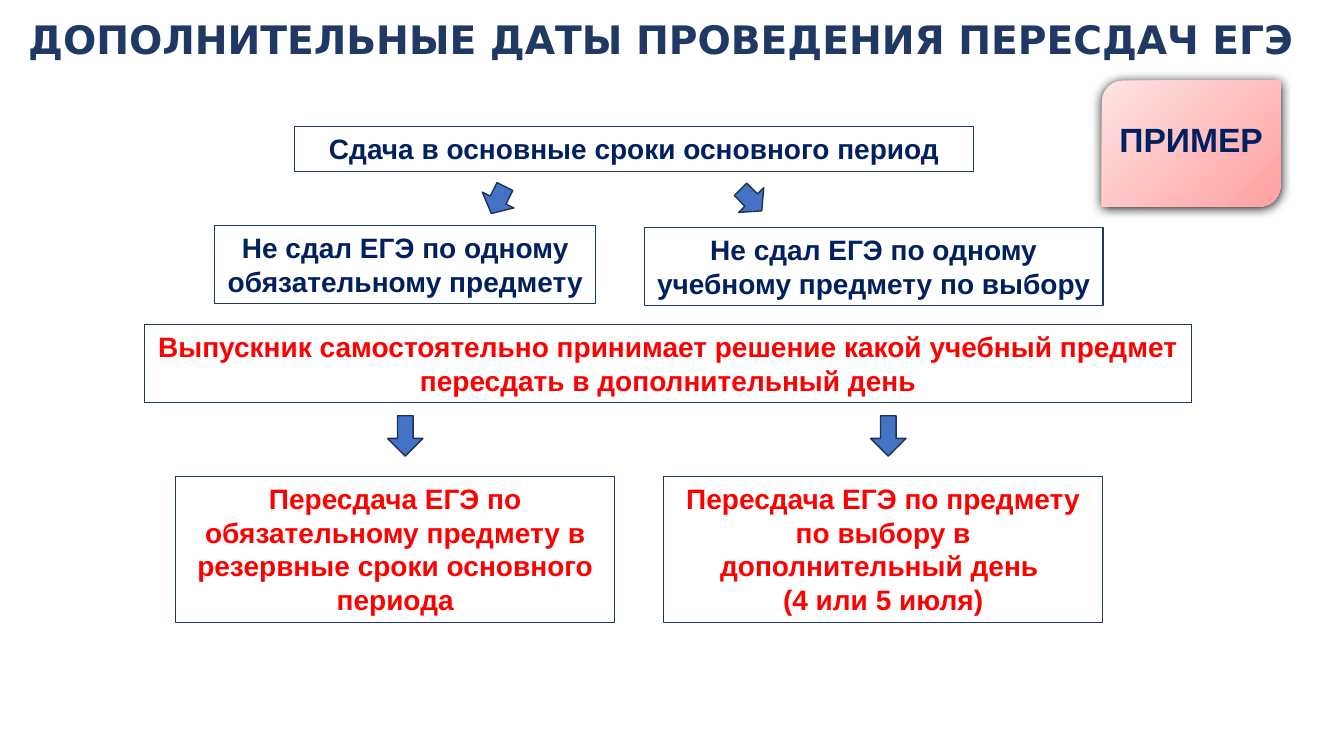
from lxml.etree import SubElement
from pptx import Presentation
from pptx.dml.color import RGBColor
from pptx.enum.shapes import MSO_SHAPE
from pptx.enum.text import MSO_ANCHOR, MSO_AUTO_SIZE, PP_ALIGN
from pptx.oxml.ns import qn
from pptx.util import Inches, Pt

NAVY, DARK_BLUE, RED = "203864", "002060", "FF0000"
ARROW_FILL, ARROW_LINE = "4472C4", "1E3256"


def rgb(value):
    """Turn a hex string into a colour."""
    return RGBColor.from_string(value)


def write(shape, text, size=20, color=DARK_BLUE, font="Arial", align=PP_ALIGN.CENTER,
          anchor=MSO_ANCHOR.TOP, fit=MSO_AUTO_SIZE.NONE, spacing=None, bottom=0.05):
    """Put bold formatted text into a shape, one paragraph per line."""
    frame = shape.text_frame
    frame.text = text
    frame.word_wrap = True
    frame.auto_size = fit
    frame.vertical_anchor = anchor
    frame.margin_bottom = Inches(bottom)
    for paragraph in frame.paragraphs:
        paragraph.alignment = align
        paragraph.line_spacing = spacing
        for run in paragraph.runs:
            run.font.name = font
            run.font.size = Pt(size)
            run.font.bold = True
            run.font.color.rgb = rgb(color)


def add_preset(slide, preset, left, top, width, height):
    """Add a preset shape without a shadow."""
    shape = slide.shapes.add_shape(
        preset, Inches(left), Inches(top), Inches(width), Inches(height))
    shape.shadow.inherit = False
    return shape


def add_step(slide, text, left, top, width, height, color=DARK_BLUE):
    """Add an outlined box with one step of the scheme."""
    step = add_preset(slide, MSO_SHAPE.RECTANGLE, left, top, width, height)
    step.fill.background()
    step.line.color.rgb = rgb(NAVY)
    step.line.width = Pt(0.75)
    write(step, text, color=color, fit=MSO_AUTO_SIZE.SHAPE_TO_FIT_TEXT)


def add_arrow(slide, left, top, length, rotation, shaft=0.5):
    """Add a rotated block arrow."""
    arrow = add_preset(slide, MSO_SHAPE.RIGHT_ARROW, left, top, length, 0.35)
    arrow.rotation = rotation
    arrow.adjustments[0] = shaft
    arrow.fill.solid()
    arrow.fill.fore_color.rgb = rgb(ARROW_FILL)
    arrow.line.color.rgb = rgb(ARROW_LINE)
    arrow.line.width = Pt(1)


def add_badge(slide, text, left, top, width, height):
    """Add the shaded badge with a gradient and a soft shadow."""
    badge = add_preset(slide, MSO_SHAPE.ROUND_2_DIAG_RECTANGLE, left, top, width, height)
    badge.line.fill.background()
    badge.fill.gradient()
    badge.fill.gradient_angle = 315
    for stop, color in zip(badge.fill.gradient_stops, ("FFE3E3", "FFA0A0")):
        stop.color.rgb = rgb(color)
    effects = badge._element.spPr.find(qn("a:effectLst"))
    shadow = SubElement(effects, qn("a:outerShdw"), blurRad=str(Pt(8.5)),
                        dist=str(Pt(1)), dir="5400000", algn="ctr", rotWithShape="0")
    SubElement(shadow, qn("a:srgbClr"), val="000000")
    write(badge, text, size=24, anchor=MSO_ANCHOR.MIDDLE, bottom=0.14)


def add_title(slide, text):
    """Place and format the slide title."""
    title = slide.shapes.title
    title.left, title.top = Inches(0.18), Inches(0.14)
    title.width, title.height = Inches(12.91), Inches(0.55)
    write(title, text, size=28, color=NAVY, font="DejaVu Sans", align=PP_ALIGN.LEFT,
          anchor=MSO_ANCHOR.MIDDLE, spacing=0.9)


def main():
    """Build the scheme of exam retakes."""
    deck = Presentation()
    deck.slide_width, deck.slide_height = Inches(13.33), Inches(7.5)
    slide = deck.slides.add_slide(deck.slide_layouts[5])
    add_title(slide, "ДОПОЛНИТЕЛЬНЫЕ ДАТЫ ПРОВЕДЕНИЯ ПЕРЕСДАЧ ЕГЭ")

    add_step(slide, "Сдача в основные сроки основного период", 2.92, 1.26, 6.74, 0.44)
    add_step(slide, "Не сдал ЕГЭ по одному обязательному предмету", 2.13, 2.24, 3.78, 0.77)
    add_step(slide, "Не сдал ЕГЭ по одному учебному предмету по выбору",
             6.39, 2.26, 4.55, 0.77)
    add_step(slide, "Выпускник самостоятельно принимает решение какой учебный предмет "
             "пересдать в дополнительный день", 1.43, 3.22, 10.39, 0.77, RED)

    retakes = (
        (1.74, "Пересдача ЕГЭ по обязательному предмету в резервные сроки основного периода"),
        (6.58, "Пересдача ЕГЭ по предмету по выбору в дополнительный день \n(4 или 5 июля)"),
    )
    for left, text in retakes:
        add_step(slide, text, left, 4.73, 4.36, 1.45, RED)

    for left, rotation in ((4.79, 116.7), (7.3, 45.5)):
        add_arrow(slide, left, 1.81, 0.3, rotation)
    for left in (3.82, 8.61):
        add_arrow(slide, left, 4.15, 0.4, 90, shaft=0.44)

    add_badge(slide, "ПРИМЕР", 10.93, 0.8, 1.77, 1.25)
    deck.save("out.pptx")


if __name__ == "__main__":
    main()
